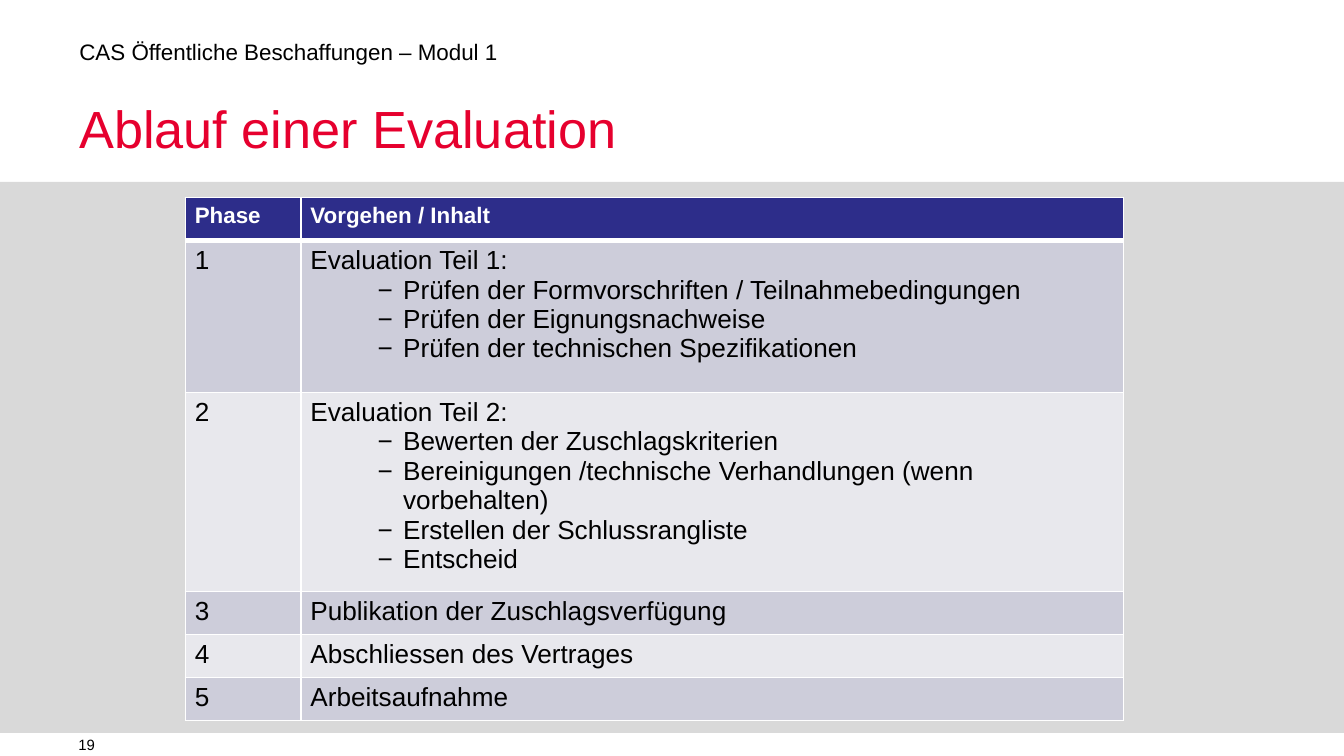
from collections import namedtuple
from dataclasses import dataclass

from lxml.etree import SubElement as Sub
from pptx import Presentation
from pptx.dml.color import RGBColor as Rgb
from pptx.enum.shapes import MSO_SHAPE as Preset
from pptx.enum.text import MSO_ANCHOR as Anchor
from pptx.oxml.ns import qn
from pptx.util import Inches, Pt

WIDTH = Inches(10)
HEIGHT = WIDTH * 9 // 16
Box = namedtuple("Box", "left top width height")


@dataclass(frozen=True)
class Theme:
    font: str = "Arial"
    ink: str = "000000"
    white: str = "FFFFFF"
    red: str = "E6002E"
    navy: str = "2D2D8A"
    panel: str = "D9D9D9"
    bands: tuple = ("CDCDDA", "E8E8ED")
    title: int = 28
    body: int = 14
    label: int = 12
    footer: int = 8


THEME = Theme()

# Phase, row height as a share of the others, lead line, steps
PHASES = [
    ("1", 1.13, "Evaluation Teil 1:", [
        "Prüfen der Formvorschriften / Teilnahmebedingungen",
        "Prüfen der Eignungsnachweise",
        "Prüfen der technischen Spezifikationen"]),
    ("2", 1.34, "Evaluation Teil 2:", [
        "Bewerten der Zuschlagskriterien",
        "Bereinigungen /technische Verhandlungen (wenn vorbehalten)",
        "Erstellen der Schlussrangliste",
        "Entscheid"]),
    ("3", 0.32, "Publikation der Zuschlagsverfügung", []),
    ("4", 0.32, "Abschliessen des Vertrages", []),
    ("5", 0.32, "Arbeitsaufnahme", []),
]
HEADER_SHARE = 0.32
COLUMN_SHARES = (0.86, 6.12)


def area(left, top, width, height):
    """Box from percentages of the slide's width and height."""
    return Box(int(WIDTH * left / 100), int(HEIGHT * top / 100),
               int(WIDTH * width / 100), int(HEIGHT * height / 100))


def split(length, shares):
    return [int(length * share / sum(shares)) for share in shares]


def write(paragraph, text, size=THEME.body, color=THEME.ink, bold=False,
          spacing=None, bullet=None):
    if bullet:
        props = paragraph._p.get_or_add_pPr()
        props.set("lvl", "1")
        props.set("marL", str(Inches(0.69)))
        props.set("indent", str(Inches(-0.19)))
        Sub(props, qn("a:buFont"), typeface=THEME.font)
        Sub(props, qn("a:buChar"), char=bullet)
    if spacing:
        paragraph.line_spacing = spacing
    run = paragraph.add_run()
    run.text = text
    run.font.name = THEME.font
    run.font.size = Pt(size)
    run.font.bold = bold
    run.font.color.rgb = Rgb.from_string(color)


def add_label(slide, box, text, anchor=Anchor.TOP, **style):
    frame = slide.shapes.add_textbox(*box).text_frame
    frame.word_wrap = True
    frame.vertical_anchor = anchor
    frame.margin_left = frame.margin_right = 0
    frame.margin_top = frame.margin_bottom = 0
    write(frame.paragraphs[0], text, **style)


def add_panel(slide, box):
    panel = slide.shapes.add_shape(Preset.RECTANGLE, *box)
    panel.shadow.inherit = False
    panel.fill.solid()
    panel.fill.fore_color.rgb = Rgb.from_string(THEME.panel)
    panel.line.fill.background()


def style_cell(cell, fill, top=1, bottom=1):
    cell.margin_left = cell.margin_right = Inches(0.07)
    cell.margin_top = cell.margin_bottom = Inches(0.04)
    props = cell._tc.get_or_add_tcPr()
    for side, points in (("L", 1), ("R", 1), ("T", top), ("B", bottom)):
        border = Sub(props, qn(f"a:ln{side}"), w=str(Pt(points)))
        Sub(Sub(border, qn("a:solidFill")), qn("a:srgbClr"), val=THEME.white)
    cell.fill.solid()
    cell.fill.fore_color.rgb = Rgb.from_string(fill)


def add_phase_table(slide, box):
    table = slide.shapes.add_table(len(PHASES) + 1, 2, *box).table

    # Grid
    for column, width in zip(table.columns, split(box.width, COLUMN_SHARES)):
        column.width = width
    row_shares = [HEADER_SHARE] + [share for _, share, _, _ in PHASES]
    for row, height in zip(table.rows, split(box.height, row_shares)):
        row.height = height

    # Header
    for column, heading in enumerate(("Phase", "Vorgehen / Inhalt")):
        cell = table.cell(0, column)
        style_cell(cell, THEME.navy, bottom=3)
        write(cell.text_frame.paragraphs[0], heading, size=THEME.label,
              color=THEME.white, bold=True)

    # Phases
    for row, (number, _, lead, steps) in enumerate(PHASES, start=1):
        for column, text in enumerate((number, lead)):
            cell = table.cell(row, column)
            style_cell(cell, THEME.bands[(row - 1) % 2],
                       top=3 if row == 1 else 1)
            write(cell.text_frame.paragraphs[0], text)
        for step in steps:
            write(cell.text_frame.add_paragraph(), step, bullet="−")


def add_heading(slide, box):
    """Course line above the slide title."""
    add_label(slide, box._replace(height=int(box.height * 0.23)),
              "CAS Öffentliche Beschaffungen – Modul 1",
              size=THEME.label, spacing=0.9)
    offset = int(box.height * 0.49)
    add_label(slide, box._replace(top=box.top + offset,
                                  height=box.height - offset),
              "Ablauf einer Evaluation", size=THEME.title,
              color=THEME.red, spacing=Pt(32))


def main():
    deck = Presentation()
    deck.slide_width, deck.slide_height = WIDTH, HEIGHT
    slide = deck.slides.add_slide(deck.slide_layouts[6])

    add_panel(slide, area(0, 24.06, 100, 72.9))
    add_heading(slide, area(5.9, 5.5, 76.8, 15.65))
    add_phase_table(slide, area(13.8, 26.15, 69.8, 66.67))
    # Page number
    add_label(slide, area(5.83, 97, 15.7, 3), "19", anchor=Anchor.MIDDLE,
              size=THEME.footer)

    deck.save("out.pptx")


if __name__ == "__main__":
    main()
